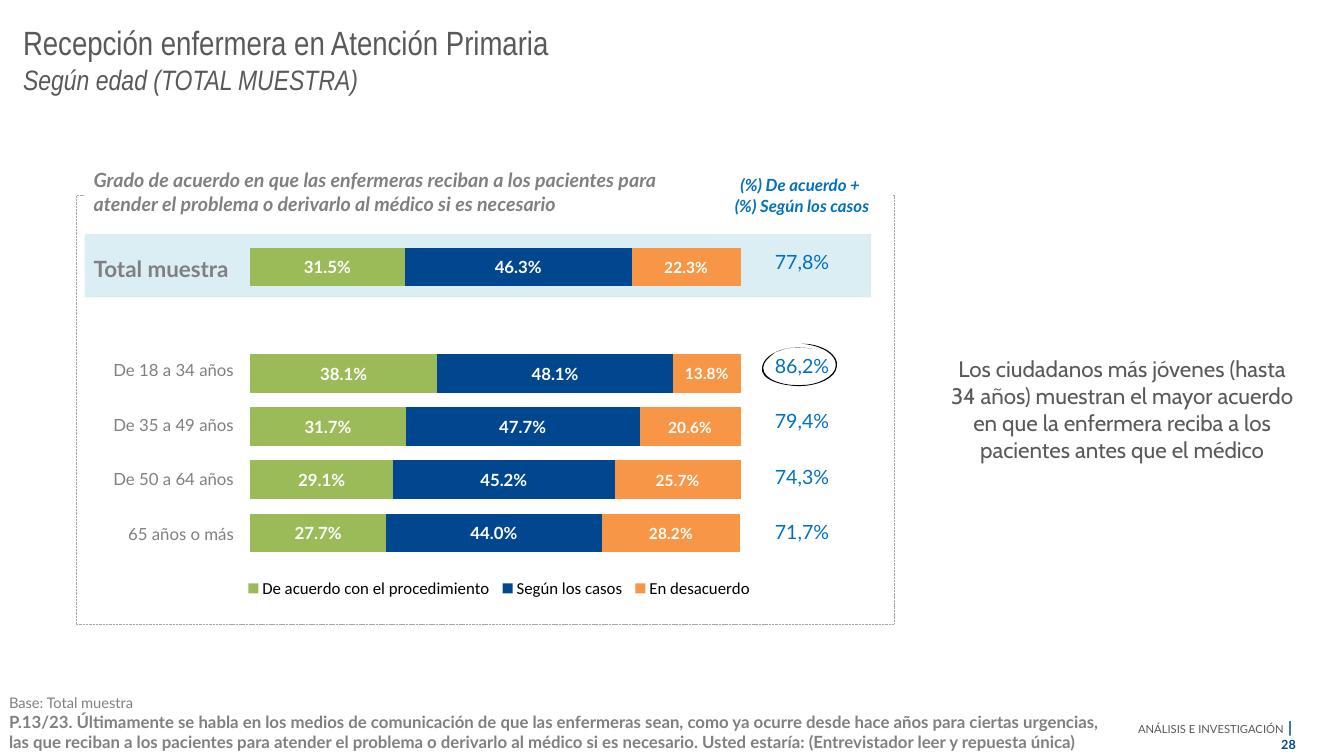
from lxml import etree
from pptx import Presentation
from pptx.chart.data import CategoryChartData
from pptx.dml.color import RGBColor
from pptx.enum import chart as ch, dml, shapes, text as tx
from pptx.oxml import parse_xml
from pptx.oxml.ns import nsdecls, qn
from pptx.util import Inches, Pt

DARK = RGBColor(0x59, 0x59, 0x59)
GREY = RGBColor(0x80, 0x80, 0x80)
DASH = RGBColor(0xA6, 0xA6, 0xA6)
NAVY = RGBColor(0x00, 0x47, 0x8F)
BLUE = RGBColor(0x00, 0x70, 0xC0)
PALE = RGBColor(0xDB, 0xEE, 0xF4)
GREEN = RGBColor(0x9B, 0xBB, 0x59)
ORANGE = RGBColor(0xF7, 0x96, 0x46)
WHITE = RGBColor(0xFF, 0xFF, 0xFF)
BLACK = RGBColor(0, 0, 0)
LEFT, MID, RIGHT = tx.PP_ALIGN.LEFT, tx.PP_ALIGN.CENTER, tx.PP_ALIGN.RIGHT
TOP, CENTER, BOTTOM = (tx.MSO_ANCHOR.TOP, tx.MSO_ANCHOR.MIDDLE,
                       tx.MSO_ANCHOR.BOTTOM)
NO_STYLE = "{2D5ABB26-0587-4C30-8999-92F81FD0307C}"

SERIES = [
    ("De acuerdo con el procedimiento", GREEN, 12,
     (31.5, None, 38.1, 31.7, 29.1, 27.7)),
    ("Según los casos", NAVY, 12, (46.3, None, 48.1, 47.7, 45.2, 44.0)),
    ("En desacuerdo", ORANGE, 11, (22.3, None, 13.8, 20.6, 25.7, 28.2)),
]
AGES = ["De 18 a 34 años", "De 35 a 49 años", "De 50 a 64 años",
        "65 años o más"]
SUMS = ["86,2%", "79,4%", "74,3%", "71,7%"]
# Bézier outline of the hand-drawn ring: a start, then two controls and an end
START = (8.05, 3.46)
RING = [
    (7.94, 3.44), (7.83, 3.44), (7.73, 3.48),
    (7.64, 3.51), (7.57, 3.57), (7.56, 3.64),
    (7.53, 3.77), (7.76, 3.83), (7.93, 3.83),
    (8.11, 3.83), (8.29, 3.75), (8.3, 3.64),
    (8.33, 3.52), (8.15, 3.41), (7.96, 3.41),
    (7.95, 3.41), (7.95, 3.41), (7.96, 3.41),
    (8.14, 3.43), (8.3, 3.51), (8.29, 3.63),
    (8.28, 3.74), (8.11, 3.82), (7.95, 3.82),
    (7.78, 3.83), (7.57, 3.77), (7.57, 3.65),
    (7.57, 3.59), (7.64, 3.53), (7.7, 3.49),
    (7.81, 3.44), (7.93, 3.44), (8.05, 3.46),
]


def style(font, size, color, name="Lato", bold=False, italic=False):
    font.size, font.name, font.bold, font.italic = Pt(size), name, bold, italic
    font.color.rgb = color


def write(para, words, align=LEFT, after=0, **look):
    """Add a run to the paragraph, with a line break at each newline."""
    para.alignment, para.space_after = align, Pt(after)
    for i, line in enumerate(words.split("\n")):
        if i:
            para.add_line_break()
        if line:
            run = para.add_run()
            run.text = line
            style(run.font, **look)


def frame(shape, anchor, pad=(0.1, 0.05)):
    box = shape.text_frame
    box.word_wrap, box.vertical_anchor = True, anchor
    box.margin_left = box.margin_right = Inches(pad[0])
    box.margin_top = box.margin_bottom = Inches(pad[1])
    return box


def label(slide, box, anchor, **pad):
    return frame(slide.shapes.add_textbox(*map(Inches, box)), anchor, **pad)


def rect(slide, box, fill=None):
    shape = slide.shapes.add_shape(shapes.MSO_SHAPE.RECTANGLE,
                                   *map(Inches, box))
    shape.shadow.inherit = False
    shape.line.fill.background()
    if fill is None:
        shape.fill.background()
    else:
        shape.fill.solid()
        shape.fill.fore_color.rgb = fill
    return shape


def column(slide, box, rows, items, **look):
    """Place a one-column table; each item is its text and own format."""
    grid = slide.shapes.add_table(len(rows), 1, *map(Inches, box)).table
    grid.first_row = grid.horz_banding = False
    grid._tbl.tblPr.find(qn("a:tableStyleId")).text = NO_STYLE
    for i, (tall, (words, own)) in enumerate(zip(rows, items)):
        grid.rows[i].height = Inches(tall)
        cell = grid.cell(i, 0)
        cell.fill.background()
        cell.vertical_anchor = CENTER
        cell.margin_left = cell.margin_right = cell.margin_top = Inches(0.01)
        cell.margin_bottom = 0
        if words:
            write(cell.text_frame.paragraphs[0], words, **{**look, **own})
    return grid


def layout(parent, x, y, w, h, inner=False):
    """Fix the place of a plot or legend, as fractions of the chart."""
    old = parent.find(qn("c:layout"))
    if old is not None:
        parent.remove(old)
    node = parse_xml(f"<c:layout {nsdecls('c')}><c:manualLayout/></c:layout>")
    parts = [("layoutTarget", "inner")] if inner else []
    parts += [("xMode", "edge"), ("yMode", "edge"),
              ("x", x), ("y", y), ("w", w), ("h", h)]
    for tag, val in parts:
        etree.SubElement(node[0], qn("c:" + tag)).set("val", str(val))
    return node


def bars(slide, box):
    data = CategoryChartData()
    data.categories = [str(n) for n in range(1, 7)]
    for name, _, _, vals in SERIES:
        data.add_series(name, vals)
    chart = slide.shapes.add_chart(ch.XL_CHART_TYPE.BAR_STACKED,
                                   *map(Inches, box), data).chart
    style(chart.font, 10, BLACK, "Calibri")
    chart.has_title = False
    cat, val = chart.category_axis, chart.value_axis
    cat.reverse_order = True
    val.minimum_scale, val.maximum_scale = 0, 100
    val.has_major_gridlines = False
    cat.visible = val.visible = False
    plot = chart.plots[0]
    plot.gap_width, plot.overlap, plot.vary_by_categories = 37, 100, False
    for part, (_, color, size, _) in zip(plot.series, SERIES):
        part.format.fill.solid()
        part.format.fill.fore_color.rgb = color
        tags = part.data_labels
        tags.show_value = True
        tags.position = ch.XL_LABEL_POSITION.CENTER
        tags.number_format, tags.number_format_is_linked = r"0.0\%", False
        style(tags.font, size, WHITE, bold=True)
    chart.has_legend = True
    key = chart.legend
    key.position, key.include_in_layout = ch.XL_LEGEND_POSITION.BOTTOM, False
    style(key.font, 12, BLACK, "Calibri")
    area = chart._chartSpace.chart.plotArea
    area.insert(0, layout(area, 0.018, 0.004, 0.95, 0.836, True))
    spot = layout(key._element, 0, 0.88, 1, 0.07)
    key._element.find(qn("c:legendPos")).addnext(spot)


def ring(slide):
    """Draw the ring, turning each three points into one curve."""
    dots = [(Inches(x), Inches(y)) for x, y in RING]
    pen = slide.shapes.build_freeform(*map(Inches, START))
    pen.add_line_segments(dots, close=True)
    shape = pen.convert_to_shape()
    steps = list(shape._element.iter(qn("a:lnTo")))[:len(RING)]
    for i in range(0, len(steps), 3):
        curve = etree.Element(qn("a:cubicBezTo"))
        steps[i].addprevious(curve)
        for step in steps[i:i + 3]:
            curve.append(step[0])
            step.getparent().remove(step)
    shape.shadow.inherit = False
    shape.fill.solid()
    shape.fill.fore_color.rgb = BLACK
    shape.line.fill.background()


def panel(slide, x, y, w, h):
    """Chart with row names on its left and sums on its right."""
    rect(slide, (x + 0.08, y + 0.38, 7.8, 0.63), PALE)
    bars(slide, (x + 1.63, y + 0.43, 5.12, 3.79))
    names = [("Total muestra ", dict(size=16, bold=True)), ("", {})]
    column(slide, (x - 0.12, y + 0.48, 1.69, 3.15), [0.49] * 2 + [0.54] * 4,
           names + [(age, {}) for age in AGES],
           size=12, color=GREY, align=RIGHT)
    edge = rect(slide, (x, y, w, h)).line
    edge.color.rgb, edge.width = DASH, Pt(0.25)
    edge.dash_style = dml.MSO_LINE.SQUARE_DOT
    head = ("(%) De acuerdo + \n(%) Según los casos",
            dict(size=12, bold=True, italic=True))
    grid = column(slide, (x + 6.3, y - 0.39, 1.79, 4.01),
                  [0.77, 0.55, 0.48] + [0.55] * 4,
                  [head, ("77,8%", {}), ("", {})] + [(n, {}) for n in SUMS],
                  size=14, color=BLUE, align=MID)
    top = grid.cell(0, 0).fill
    top.solid()
    top.fore_color.rgb = WHITE
    ask = frame(rect(slide, (x + 0.07, y - 0.32, 6.41, 0.57), WHITE), TOP)
    write(ask.paragraphs[0], "Grado de acuerdo en que las enfermeras reciban a los pacientes para atender el problema o derivarlo al médico si es necesario",
          after=6, size=14, color=GREY, bold=True, italic=True)


def title(slide, box):
    para = label(slide, box, TOP).paragraphs[0]
    look = dict(color=DARK, name="Arial Narrow")
    write(para, "Recepción enfermera en Atención Primaria\n", size=24, **look)
    write(para, "Según edad (TOTAL MUESTRA)", size=20, italic=True, **look)


def note(slide, box):
    para = frame(rect(slide, box, WHITE), CENTER).paragraphs[0]
    write(para, "Los ciudadanos más jóvenes (hasta 34 años) muestran el mayor acuerdo en que la enfermera reciba a los pacientes antes que el médico",
          align=MID, after=6, size=16, color=DARK, name="Cabin")


def foot(slide, base, page):
    body = label(slide, base, BOTTOM, pad=(0.09, 0.04))
    write(body.paragraphs[0], "Base: Total muestra", size=10.5, color=GREY)
    write(body.add_paragraph(), "P.13/23. Últimamente se habla en los medios de comunicación de que las enfermeras sean, como ya ocurre desde hace años para ciertas urgencias, las que reciban a los pacientes para atender el problema o derivarlo al médico si es necesario. Usted estaría: (Entrevistador leer y repuesta única)",
          size=12, color=GREY, bold=True)
    para = label(slide, page, CENTER).paragraphs[0]
    for words, size, color, bold in [
            ("ANÁLISIS E INVESTIGACIÓN", 8, DARK, False),
            (" ", 11, DARK, False), ("|  ", 11, NAVY, True),
            ("28", 9, NAVY, True)]:
        write(para, words, align=RIGHT, size=size, color=color, bold=bold)


def main():
    deck = Presentation()
    deck.slide_width, deck.slide_height = Inches(13.33), Inches(7.5)
    slide = deck.slides.add_slide(deck.slide_layouts[6])
    title(slide, (0.13, 0.17, 11.42, 0.84))
    panel(slide, 0.76, 1.94, 8.11, 4.25)
    note(slide, (9.27, 3.03, 3.72, 2.05))
    ring(slide)
    foot(slide, (0, 6.83, 11, 0.67), (11.04, 7.15, 1.91, 0.29))
    deck.save("out.pptx")


if __name__ == "__main__":
    main()
